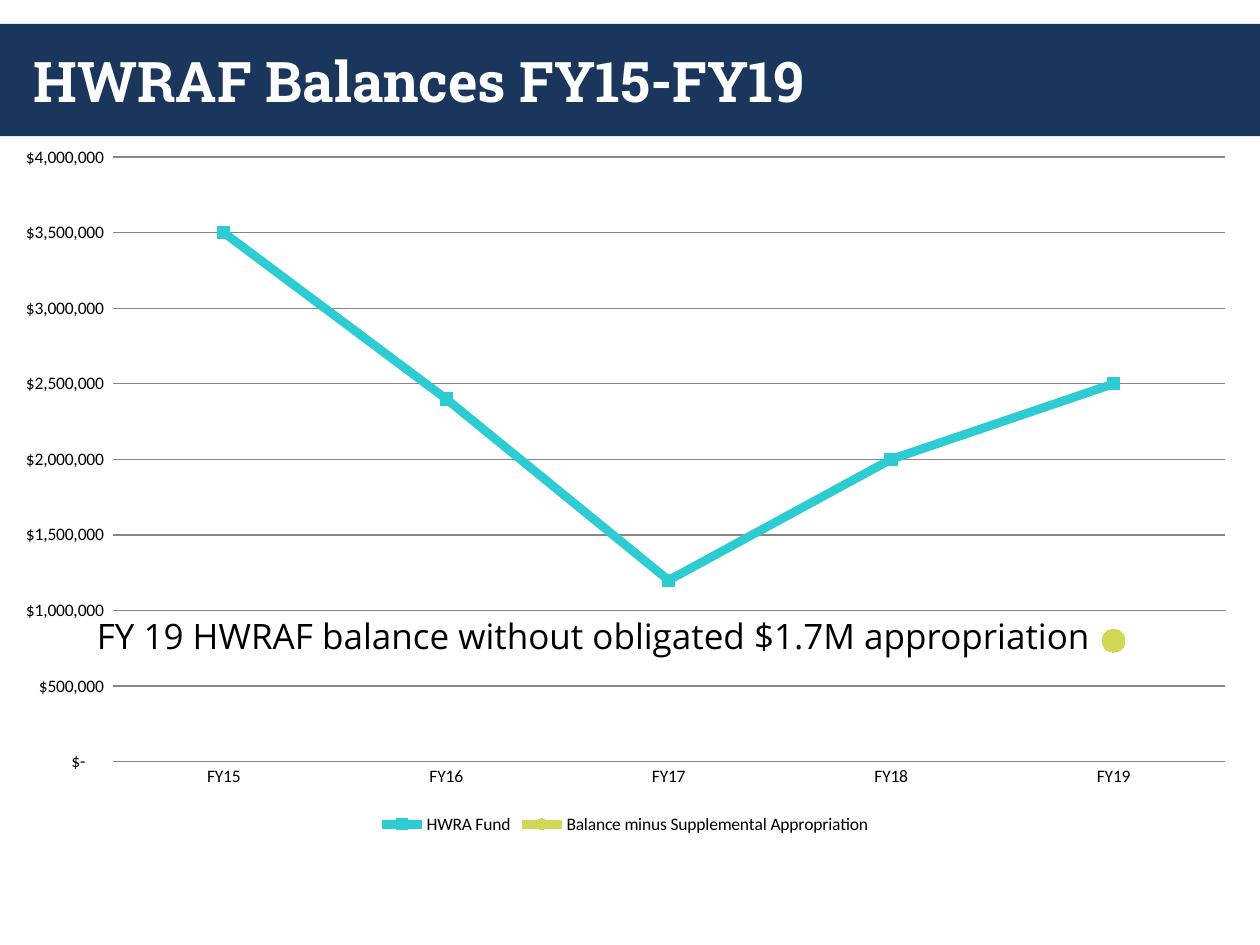
from lxml import etree
from pptx import Presentation, util as u
from pptx.chart.data import CategoryChartData
from pptx.dml.color import RGBColor
from pptx.enum import chart as charts, shapes, text
from pptx.oxml import ns

CURRENCY = '_("$"* #,##0_);_("$"* \\(#,##0\\);_("$"* "-"??_);_(@_)'
YEARS = [f"FY{year}" for year in range(15, 20)]
BALANCES = [3500000, 2400000, 1200000, 2000000, 2500000]
REDUCED = [None] * 4 + [800000]
SERIES_STYLES = [
    ("2DCCD3", charts.XL_MARKER_STYLE.SQUARE, 7),
    ("D2D755", charts.XL_MARKER_STYLE.CIRCLE, 13),
]


def color(value):
    """Turn a hex string into a colour."""
    return RGBColor.from_string(value)


def add_text(slide, box, content, font, size, hue, bold=False,
             anchor=text.MSO_ANCHOR.TOP):
    """Add one line of text in the given box."""
    shape = slide.shapes.add_textbox(*map(u.Inches, box))
    frame = shape.text_frame
    frame.word_wrap = True
    frame.vertical_anchor = anchor
    run = frame.paragraphs[0].add_run()
    run.text = content
    run.font.name = font
    run.font.size = u.Pt(size)
    run.font.bold = bold
    run.font.color.rgb = color(hue)


def add_title_band(slide, box):
    """Add the dark band and the title over it."""
    left, top, width, height = box
    band = slide.shapes.add_shape(shapes.MSO_SHAPE.RECTANGLE, *map(u.Inches, box))
    band.shadow.inherit = False
    band.fill.solid()
    band.fill.fore_color.rgb = color("1B365D")
    band.line.fill.background()
    add_text(slide, (left + 0.17, top, width - 0.33, height),
             "HWRAF Balances FY15-FY19", "Roboto Slab", 32, "FFFFFF", True,
             text.MSO_ANCHOR.MIDDLE)


def style_series(series, hue, marker, size):
    """Give a series its line and marker."""
    series.smooth = False
    series.format.line.width = u.Pt(5)
    series.format.line.color.rgb = color(hue)
    series.marker.style = marker
    series.marker.size = size
    series.marker.format.fill.solid()
    series.marker.format.fill.fore_color.rgb = color(hue)
    series.marker.format.line.color.rgb = color(hue)


def place_plot(chart, x, y, w, h):
    """Fix the inner plot area as fractions of the chart."""
    plot_area = chart.element.find(".//" + ns.qn("c:plotArea"))
    for old in plot_area.findall(ns.qn("c:layout")):
        plot_area.remove(old)
    layout = etree.Element(ns.qn("c:layout"))
    plot_area.insert(0, layout)
    manual = etree.SubElement(layout, ns.qn("c:manualLayout"))
    settings = [("layoutTarget", "inner"), ("xMode", "edge"), ("yMode", "edge"),
                ("x", x), ("y", y), ("w", w), ("h", h)]
    for name, value in settings:
        etree.SubElement(manual, ns.qn("c:" + name)).set("val", str(value))


def style_axes(chart):
    """Set the scale, grid lines and tick marks."""
    for axis in (chart.category_axis, chart.value_axis):
        axis.major_tick_mark = charts.XL_TICK_MARK.NONE
        axis.minor_tick_mark = charts.XL_TICK_MARK.NONE
    chart.category_axis.format.line.color.rgb = color("868686")
    values = chart.value_axis
    values.minimum_scale = 0
    values.maximum_scale = 4000000
    values.major_unit = 500000
    values.format.line.fill.background()
    values.major_gridlines.format.line.color.rgb = color("868686")
    values.major_gridlines.format.line.width = u.Pt(0.75)
    values.tick_labels.number_format = CURRENCY
    values.tick_labels.number_format_is_linked = False


def add_balance_chart(slide, box):
    """Add the line chart of fund balances."""
    data = CategoryChartData(number_format=CURRENCY)
    data.categories = YEARS
    data.add_series("HWRA Fund", BALANCES)
    data.add_series("Balance minus Supplemental Appropriation", REDUCED)
    chart = slide.shapes.add_chart(charts.XL_CHART_TYPE.LINE_MARKERS,
                                   *map(u.Inches, box), data).chart
    chart.has_title = False
    chart.font.name = "Calibri"
    chart.font.size = u.Pt(10)
    chart.font.color.rgb = color("000000")
    chart.has_legend = True
    chart.legend.position = charts.XL_LEGEND_POSITION.BOTTOM
    chart.legend.include_in_layout = False
    chart.plots[0].vary_by_categories = False
    for series, style in zip(chart.plots[0].series, SERIES_STYLES):
        style_series(series, *style)
    style_axes(chart)
    place_plot(chart, 0.09, 0.03, 0.89, 0.86)


def main():
    """Build and save the slide."""
    presentation = Presentation()
    presentation.slide_width = u.Inches(10)
    presentation.slide_height = u.Inches(7.5)
    slide = presentation.slides.add_slide(presentation.slide_layouts[6])
    add_title_band(slide, (0, 0.19, 10, 0.89))
    add_text(slide, (0.67, 4.83, 8.17, 0.44),
             "FY 19 HWRAF balance without obligated $1.7M appropriation",
             "Open Sans", 20, "000000")
    add_balance_chart(slide, (0, 1.08, 9.92, 5.58))
    presentation.save("out.pptx")


if __name__ == "__main__":
    main()
